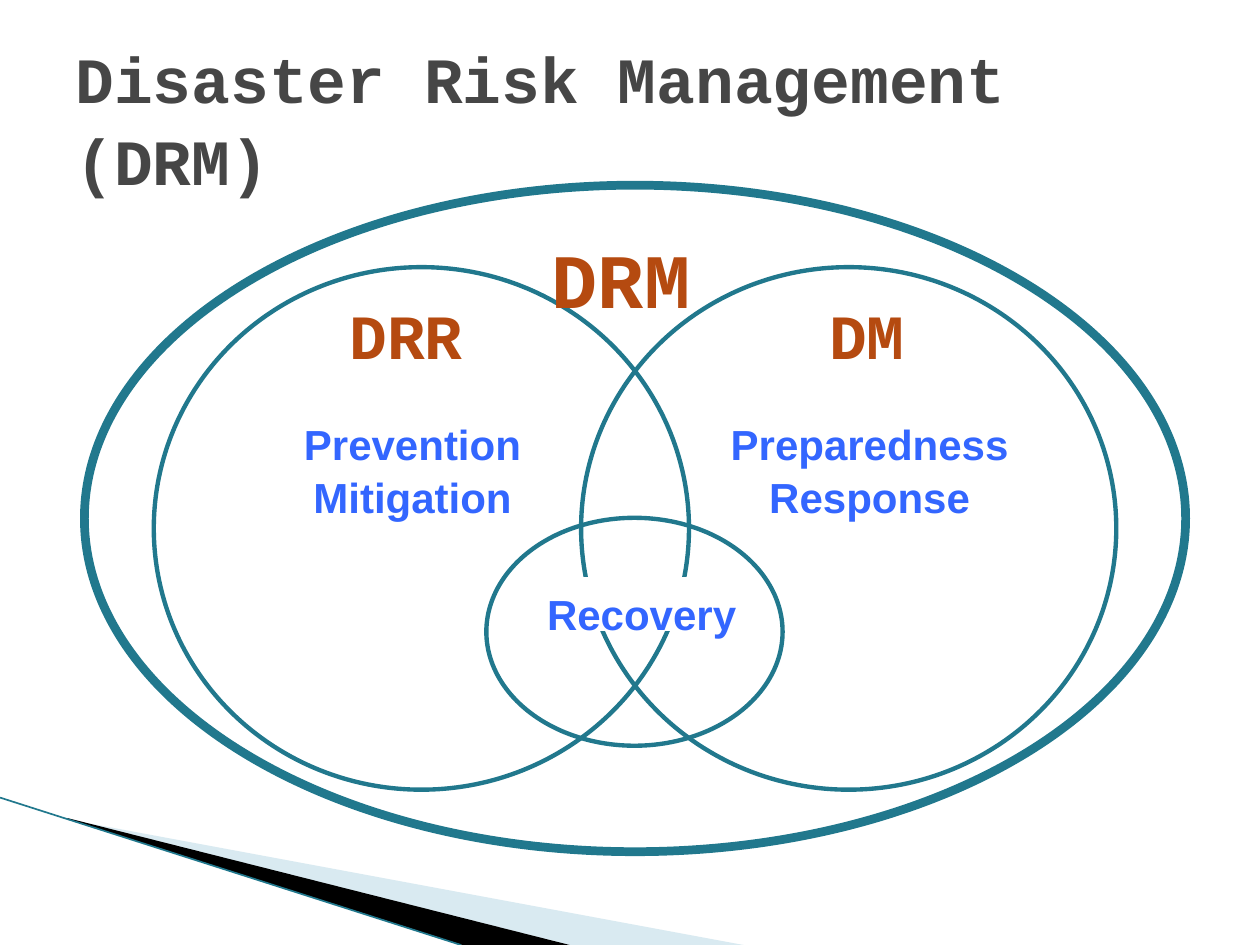
from dataclasses import dataclass
from lxml.etree import SubElement
from pptx import Presentation
from pptx.dml.color import RGBColor
from pptx.enum.shapes import MSO_CONNECTOR, MSO_SHAPE
from pptx.enum.text import MSO_ANCHOR, PP_ALIGN
from pptx.oxml.ns import qn
from pptx.util import Inches, Pt


@dataclass(frozen=True)
class Theme:
    """Colours, fonts and type sizes of the slide."""
    ring: str = "21788D"
    pale: str = "A0CBDC"
    black: str = "000000"
    white: str = "FFFFFF"
    title: str = "464646"
    head: str = "B54A10"
    body: str = "3366FF"
    mono: str = "Courier New"
    sans: str = "Arial"
    title_pt: float = 36.9
    main_pt: int = 44
    head_pt: int = 36
    body_pt: int = 24
    spacing: float = 1.06


T = Theme()
SLIDE = (0, 0, Inches(10), Inches(7.5))


def at(box, x, y):
    """Turn percentages of a box into a point."""
    left, top, w, h = box
    return int(left + w * x / 100), int(top + h * y / 100)


def inside(box, x, y, w, h):
    """Turn percentages of a box into a smaller box."""
    return *at(box, x, y), int(box[2] * w / 100), int(box[3] * h / 100)


def rgb(colour):
    """Read a hexadecimal colour."""
    return RGBColor.from_string(colour)


def write(sp, lines, font, size, colour, align, anchor=MSO_ANCHOR.TOP):
    """Put bold paragraphs of one style into a shape."""
    tf = sp.text_frame
    tf.word_wrap = True
    tf.vertical_anchor = anchor
    tf.text = lines
    for p in tf.paragraphs:
        p.alignment, p.line_spacing = align, T.spacing
        f = p.font
        f.name, f.size, f.bold = font, Pt(size), True
        f.color.rgb = rgb(colour)
    return tf


def add_wedge(s, box, colour, points, alpha=None):
    """Draw one filled sliver whose corners are percentages of the box."""
    start, *rest = [at(box, *pt) for pt in points]
    fb = s.shapes.build_freeform(*start)
    fb.add_line_segments(rest, close=True)
    sp = fb.convert_to_shape()
    sp.shadow.inherit = False
    sp.line.fill.background()
    sp.fill.solid()
    sp.fill.fore_color.rgb = rgb(colour)
    if alpha:
        clr = sp.fill._xPr.find(".//" + qn("a:srgbClr"))
        SubElement(clr, qn("a:alpha")).set("val", str(alpha * 1000))


def add_corner(s, box):
    """Draw the slanted decoration in the lower left corner."""
    add_wedge(s, box, T.pale, [(9.2, 15), (99.2, 100), (76, 100), (9.2, 14.5)], 40)
    add_wedge(s, box, T.black, [(9, 13.9), (76, 100), (61.7, 100), (9, 14.5)])
    cx = s.shapes.add_connector(MSO_CONNECTOR.STRAIGHT, *at(box, 0, 0), *at(box, 61.5, 100))
    cx.line.color.rgb = rgb(T.ring)
    cx.line.width = Pt(0.95)
    SubElement(cx._element.spPr, qn("a:effectLst"))


def add_ring(s, box, width):
    """Draw an unfilled ellipse."""
    sp = s.shapes.add_shape(MSO_SHAPE.OVAL, *box)
    sp.shadow.inherit = False
    sp.fill.background()
    sp.line.color.rgb = rgb(T.ring)
    sp.line.width = Pt(width)


def add_label(s, box, lines, font, size, colour, align=PP_ALIGN.CENTER, fill=None):
    """Place a label, on a filled patch if a fill is given."""
    sp = s.shapes.add_textbox(*box)
    if fill:
        sp.fill.solid()
        sp.fill.fore_color.rgb = rgb(fill)
    tf = write(sp, lines, font, size, colour, align)
    tf.margin_top = Inches(0.004 * size - 0.03)
    tf.margin_bottom = 0


def add_venn(s, box):
    """Draw the overlapping rings and their labels."""
    side, w = 6.3, 48.6
    for x in (side, 100 - side - w):
        add_ring(s, inside(box, x, 12.3, w, 78.4), 2.5)
    add_ring(s, inside(box, 36.5, 49.9, 26.9, 34.2), 2.5)
    add_ring(s, box, 5)
    main = (T.mono, T.main_pt, T.head)
    head = (T.mono, T.head_pt, T.head)
    body = (T.sans, T.body_pt, T.body)
    for place, lines, style in (
        ((41.3, 3.4, 17.7, 13.6), "DRM", (*main, PP_ALIGN.LEFT)),
        ((15.2, 13.8, 28, 11.5), "DRR", head),
        ((56.3, 13.8, 29.5, 11.5), "DM", head),
        ((39.6, 58.8, 20.7, 8.1), "Recovery", (*body, PP_ALIGN.RIGHT, T.white)),
        ((12.7, 33.3, 34.2, 14.7), "Prevention\nMitigation", body),
        ((56.9, 33.3, 28.8, 14.7), "Preparedness\nResponse", body),
    ):
        add_label(s, inside(box, *place), lines, *style)


def add_title(s, box):
    """Write the slide title."""
    write(s.shapes.add_textbox(*box), "Disaster Risk Management (DRM)",
          T.mono, T.title_pt, T.title, PP_ALIGN.LEFT, MSO_ANCHOR.MIDDLE)


def main():
    """Build and save the slide."""
    prs = Presentation()
    prs.slide_width, prs.slide_height = SLIDE[2:]
    s = prs.slides.add_slide(prs.slide_layouts[6])
    add_corner(s, inside(SLIDE, 0, 84.4, 59.5, 15.6))
    add_venn(s, inside(SLIDE, 6.7, 19.6, 87.4, 70.53))
    add_title(s, inside(SLIDE, 5, 4, 90, 16.67))
    prs.save("out.pptx")


if __name__ == "__main__":
    main()
